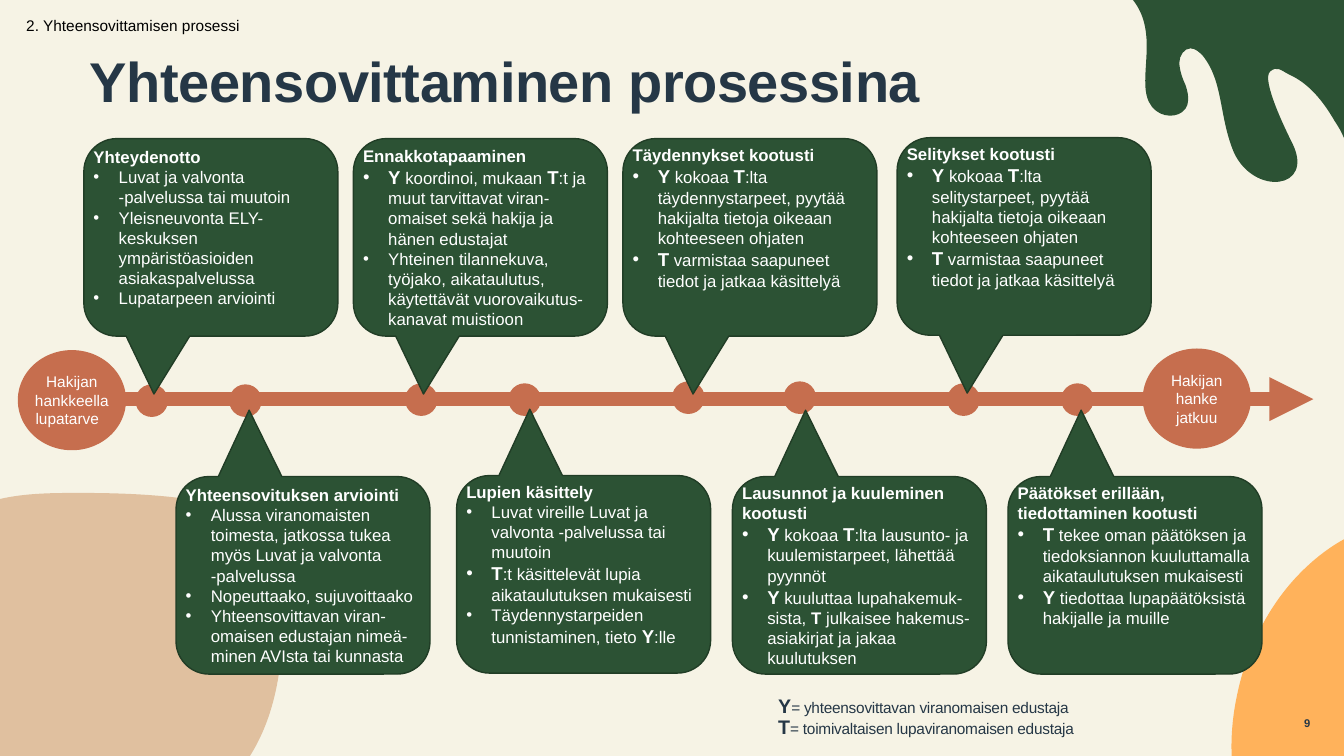
from dataclasses import dataclass
from typing import Any

from lxml.etree import SubElement
from pptx import Presentation
from pptx.dml.color import RGBColor
from pptx.enum.shapes import MSO_CONNECTOR, MSO_SHAPE
from pptx.enum.text import MSO_ANCHOR, MSO_AUTO_SIZE, PP_ALIGN
from pptx.oxml.ns import qn
from pptx.util import Inches, Pt

# The grid has square cells of a hundredth of an inch.
CELL = Inches(0.01)
COLUMNS, ROWS = 1333.33, 750


@dataclass(frozen=True)
class Theme:
    font: str = "Arial"
    cream: str = "F6F3E5"
    green: str = "2C5234"
    dark_green: str = "213D26"
    clay: str = "C66E4E"
    sand: str = "E0C09F"
    orange: str = "FFB25B"
    navy: str = "253746"
    black: str = "000000"
    white: str = "FFFFFF"
    title: float = 40
    key: float = 14
    role: float = 13.3
    body: float = 12
    small: float = 11
    page: float = 8


THEME = Theme()


@dataclass(frozen=True)
class Step:
    """A callout; asterisks mark a role letter, and a caret keeps it at body size."""
    column: float
    row: float
    dot: tuple[float, float]
    heading: str
    bullets: tuple[str, ...]
    spare_lines: int = 0


@dataclass(frozen=True)
class Blob:
    """A start point followed by curves of three points and lines of one."""
    colour: str
    start: tuple[float, float]
    pieces: tuple[tuple[float, ...], ...]


@dataclass(frozen=True)
class Milestone:
    column: float
    row: float
    lines: tuple[str, ...]
    last_indent: float = 0


CALLOUT_SIZE = (252, 196)
DOT = 31
UPPER_POINTER = (-0.224, 0.793, 0.167)
LOWER_POINTER = (-0.212, -0.836, 0.167)
CASE_WORK = "*T* varmistaa saapuneet tiedot ja jatkaa käsittelyä"

UPPER_STEPS = (
    Step(83.2, 137.5, (135, 382), "Yhteydenotto", (
        "Luvat ja valvonta -palvelussa tai muutoin",
        "Yleisneuvonta ELY-keskuksen ympäristöasioiden asiakaspalvelussa",
        "Lupatarpeen arviointi"), 1),
    Step(350.6, 137.5, (402.4, 381), "Ennakkotapaaminen", (
        "*Y* koordinoi, mukaan *T*:t ja muut tarvittavat viran-omaiset sekä hakija "
        "ja hänen edustajat",
        "Yhteinen tilannekuva, työjako, aikataulutus, käytettävät "
        "vuorovaikutus-kanavat muistioon")),
    Step(618, 137.5, (667.4, 379), "Täydennykset kootusti", (
        "*Y* kokoaa *T*:lta täydennystarpeet, pyytää hakijalta tietoja oikeaan "
        "kohteeseen ohjaten", CASE_WORK), 2),
    Step(890, 136.6, (940.4, 381), "Selitykset kootusti", (
        "*Y* kokoaa *T*:lta selitystarpeet, pyytää hakijalta tietoja oikeaan "
        "kohteeseen ohjaten", CASE_WORK), 2),
)
LOWER_STEPS = (
    Step(174.6, 472.8, (228, 382), "Yhteensovituksen arviointi", (
        "Alussa viranomaisten toimesta, jatkossa tukea myös Luvat ja valvonta -palvelussa",
        "Nopeuttaako, sujuvoittaako",
        "Yhteensovittavan viran-omaisen edustajan nimeä-minen AVIsta tai kunnasta")),
    Step(453, 471.8, (505, 381), "Lupien käsittely", (
        "Luvat vireille Luvat ja valvonta -palvelussa tai muutoin",
        "*T*:t käsittelevät lupia aikataulutuksen mukaisesti",
        "Täydennystarpeiden tunnistaminen, tieto *Y*:lle"), 1),
    Step(726.6, 472.8, (778, 379), "Lausunnot ja kuuleminen kootusti", (
        "*Y* kokoaa *T*:lta lausunto- ja kuulemistarpeet, lähettää pyynnöt",
        "*Y* kuuluttaa lupahakemuk-sista, *^T* julkaisee hakemus-asiakirjat ja jakaa "
        "kuulutuksen")),
    Step(1000, 472.8, (1053.4, 381), "Päätökset erillään, tiedottaminen kootusti", (
        "*T* tekee oman päätöksen ja tiedoksiannon kuuluttamalla aikataulutuksen mukaisesti",
        "*Y* tiedottaa lupapäätöksistä hakijalle ja muille"), 2),
)
MILESTONES = (Milestone(18.4, 348, ("Hakijan", "hankkeella", "lupatarve"), 9),
              Milestone(1134.4, 346.4, ("Hakijan", "hanke jatkuu")))
ROLES = (("Y", "= yhteensovittavan viranomaisen edustaja"),
         ("T", "= toimivaltaisen lupaviranomaisen edustaja"))
BLOBS = (
    Blob(THEME.orange, (COLUMNS, 535), (
        (1315, 545, 1297, 560, 1282, 577), (1253, 610, 1235, 651, 1227, 691),
        (1223, 710, 1221, 731, 1222, ROWS), (COLUMNS, ROWS))),
    Blob(THEME.sand, (248, ROWS), (
        (265, 723, 274, 692, 278, 659), (280, 642, 281, 626, 280, 610),
        (279, 580, 275, 546, 251, 522), (232, 503, 204, 497, 178, 494),
        (145, 490, 112, 489, 79, 489), (54, 489, 26, 489, 0, 495), (0, ROWS))),
    Blob(THEME.green, (COLUMNS, 137), (
        (1331, 131, 1328, 126, 1324, 120), (1313, 101, 1299, 83, 1279, 74),
        (1271, 70, 1267, 65, 1260, 71), (1251, 79, 1276, 130, 1282, 142),
        (1305, 188, 1244, 195, 1224, 151), (1209, 115, 1214, 81, 1193, 55),
        (1190, 52, 1186, 48, 1181, 48), (1175, 48, 1170, 55, 1170, 62),
        (1170, 69, 1173, 78, 1176, 84), (1178, 90, 1180, 97, 1178, 104),
        (1174, 116, 1157, 118, 1147, 110), (1121, 90, 1154, 38, 1124, 0),
        (COLUMNS, 0))),
)


def cells(*counts: float) -> list[int]:
    return [round(count * CELL) for count in counts]


def apply(target: Any, **values: Any) -> None:
    for name, value in values.items():
        setattr(target, name, value)


def paint(shape: Any, fill: str, line: str | None = None) -> None:
    shape.shadow.inherit = False
    shape.fill.solid()
    shape.fill.fore_color.rgb = RGBColor.from_string(fill)
    if line:
        shape.line.color.rgb = RGBColor.from_string(line)
        shape.line.width = Pt(1)
    else:
        shape.line.fill.background()


def set_frame(frame: Any, **values: Any) -> Any:
    defaults = dict(word_wrap=True, auto_size=MSO_AUTO_SIZE.NONE, margin_left=0,
                    margin_right=0, margin_top=0, margin_bottom=0,
                    vertical_anchor=MSO_ANCHOR.TOP)
    apply(frame, **(defaults | values))
    return frame


def add_run(paragraph: Any, text: str, size: float, colour: str,
            bold: bool = False, tracking: int = 0) -> None:
    run = paragraph.add_run()
    run.text = text
    apply(run.font, name=THEME.font, size=Pt(size), bold=bold)
    run.font.color.rgb = RGBColor.from_string(colour)
    if tracking:
        run.font._element.set("spc", str(tracking))


def next_paragraph(frame: Any, index: int, **values: Any) -> Any:
    paragraph = frame.add_paragraph() if index else frame.paragraphs[0]
    apply(paragraph, **values)
    return paragraph


def add_label(slide: Any, box: tuple[float, ...], **frame_values: Any) -> Any:
    return set_frame(slide.shapes.add_textbox(*cells(*box)).text_frame, **frame_values)


def add_blob(slide: Any, blob: Blob) -> None:
    """Join the knots with straight segments, then bend those that have control points."""
    builder = slide.shapes.build_freeform(*cells(*blob.start), scale=1.0)
    builder.add_line_segments([cells(*piece[-2:]) for piece in blob.pieces], close=True)
    shape = builder.convert_to_shape()
    segments = list(shape._element.iter(qn("a:lnTo")))
    for segment, piece in zip(segments, blob.pieces):
        if len(piece) == 6:
            curve = segment.makeelement(qn("a:cubicBezTo"))
            for x, y in zip(cells(*piece[::2]), cells(*piece[1::2])):
                SubElement(curve, qn("a:pt"), x=str(x - shape.left), y=str(y - shape.top))
            segment.getparent().replace(segment, curve)
    paint(shape, blob.colour)


def add_timeline(slide: Any) -> None:
    arrow = slide.shapes.add_connector(MSO_CONNECTOR.STRAIGHT, *cells(72, 396, 1303, 396))
    arrow.line.color.rgb = RGBColor.from_string(THEME.clay)
    arrow.line.width = Pt(10.5)
    SubElement(arrow.line._get_or_add_ln(), qn("a:tailEnd"), type="triangle")
    SubElement(arrow._element.spPr, qn("a:effectLst"))


def add_circle(slide: Any, *box: float) -> Any:
    circle = slide.shapes.add_shape(MSO_SHAPE.OVAL, *cells(*box))
    paint(circle, THEME.clay, THEME.clay)
    return circle


def add_milestone(slide: Any, milestone: Milestone) -> None:
    circle = add_circle(slide, milestone.column, milestone.row, 106, 98)
    frame = set_frame(circle.text_frame, vertical_anchor=MSO_ANCHOR.MIDDLE)
    for index, line in enumerate(milestone.lines):
        paragraph = next_paragraph(frame, index, alignment=PP_ALIGN.CENTER)
        add_run(paragraph, line, THEME.small, THEME.white)
    if milestone.last_indent:
        paragraph._p.get_or_add_pPr().set("marR", str(cells(milestone.last_indent)[0]))


def add_callout(slide: Any, step: Step, pointer: tuple[float, ...]) -> None:
    callout = slide.shapes.add_shape(MSO_SHAPE.ROUNDED_RECTANGULAR_CALLOUT,
                                     *cells(step.column, step.row, *CALLOUT_SIZE))
    for index, value in enumerate(pointer):
        callout.adjustments[index] = value
    paint(callout, THEME.green, THEME.dark_green)
    top, bottom = cells(5, 5 + 19.5 * step.spare_lines)
    frame = set_frame(callout.text_frame, vertical_anchor=MSO_ANCHOR.MIDDLE,
                      margin_top=top, margin_bottom=bottom)
    heading = next_paragraph(frame, 0, alignment=PP_ALIGN.LEFT)
    add_run(heading, step.heading, THEME.body, THEME.white, bold=True)
    for index, text in enumerate(step.bullets, 1):
        paragraph = next_paragraph(frame, index, alignment=PP_ALIGN.LEFT)
        properties = paragraph._p.get_or_add_pPr()
        properties.set("marL", str(Inches(0.25)))
        properties.set("indent", str(-Inches(0.25)))
        SubElement(properties, qn("a:buFont"), typeface=THEME.font)
        SubElement(properties, qn("a:buChar"), char="•")
        for position, part in enumerate(text.split("*")):
            is_role = position % 2 == 1
            size = THEME.role if is_role and not part.startswith("^") else THEME.body
            if part:
                add_run(paragraph, part.lstrip("^"), size, THEME.white, bold=is_role)


def add_texts(slide: Any) -> None:
    title = slide.shapes.title
    apply(title, **dict(zip(("left", "top", "width", "height"), cells(89, 76, 1138, 131))))
    heading = next_paragraph(set_frame(title.text_frame), 0, alignment=PP_ALIGN.LEFT,
                             line_spacing=Pt(26.7))
    add_run(heading, "Yhteensovittaminen prosessina", THEME.title, THEME.navy, True, -30)

    section = next_paragraph(add_label(slide, (26, 21, 609, 33)), 0, line_spacing=Pt(9.8))
    add_run(section, "2. Yhteensovittamisen prosessi", THEME.small, THEME.black)

    number_frame = add_label(slide, (1253, 703, 47, 22), vertical_anchor=MSO_ANCHOR.MIDDLE)
    number = next_paragraph(number_frame, 0, alignment=PP_ALIGN.RIGHT, line_spacing=Pt(14))
    add_run(number, "9", THEME.page, THEME.navy, bold=True)

    legend = next_paragraph(add_label(slide, (772, 691, 368, 46)), 0, line_spacing=0.9)
    for index, (letter, meaning) in enumerate(ROLES):
        if index:
            legend.add_line_break()
        add_run(legend, letter, THEME.key, THEME.navy, True, -20)
        add_run(legend, meaning, THEME.small, THEME.navy, False, -20)


def main() -> None:
    deck = Presentation()
    deck.slide_width, deck.slide_height = cells(COLUMNS, ROWS)
    slide = deck.slides.add_slide(deck.slide_layouts[5])
    slide.background.fill.solid()
    slide.background.fill.fore_color.rgb = RGBColor.from_string(THEME.cream)
    for blob in BLOBS:
        add_blob(slide, blob)
    add_texts(slide)
    add_timeline(slide)
    for step in UPPER_STEPS + LOWER_STEPS:
        add_circle(slide, *step.dot, DOT, DOT)
    for milestone in MILESTONES:
        add_milestone(slide, milestone)
    for steps, pointer in ((UPPER_STEPS, UPPER_POINTER), (LOWER_STEPS, LOWER_POINTER)):
        for step in steps:
            add_callout(slide, step, pointer)
    deck.save("out.pptx")


if __name__ == "__main__":
    main()
